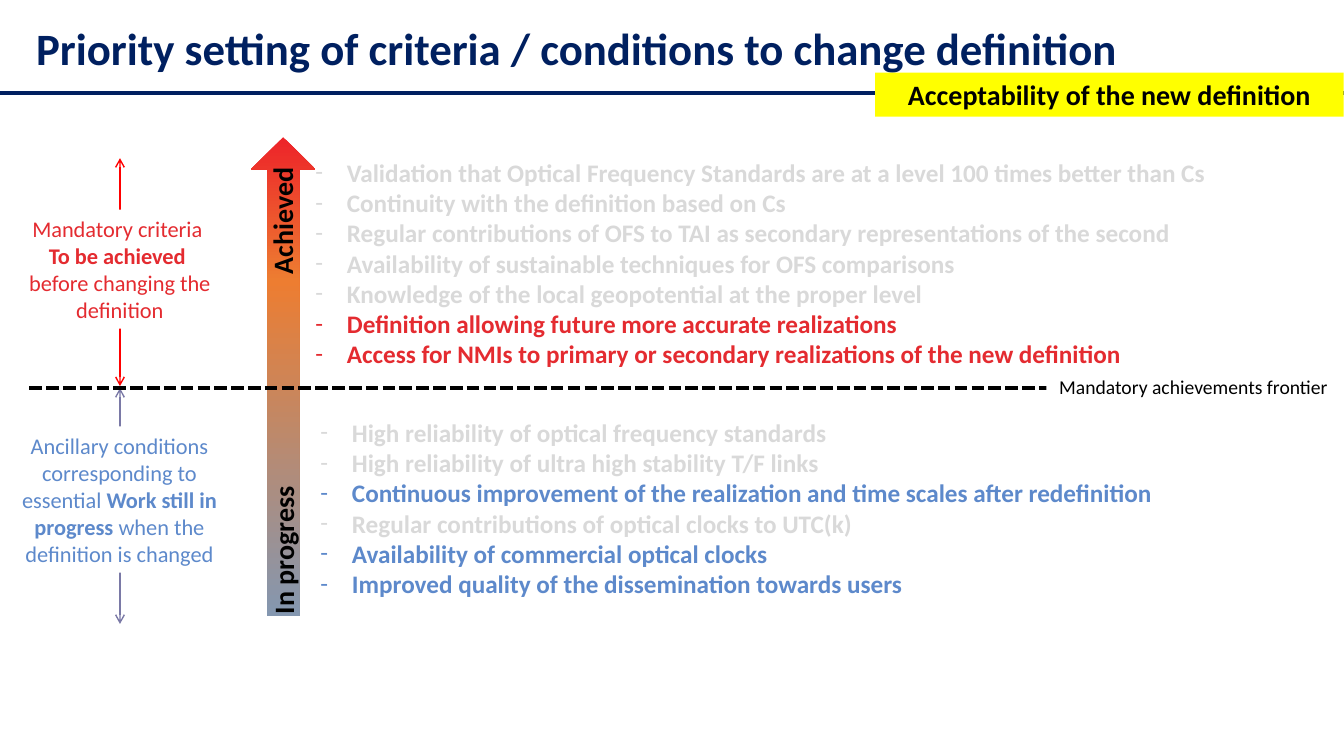
import copy
from dataclasses import dataclass

import lxml.etree
import pptx
import pptx.dml.color
import pptx.enum.dml
import pptx.enum.shapes
import pptx.enum.text
import pptx.oxml.ns
import pptx.shapes.base
import pptx.slide
import pptx.text.text
import pptx.util

Pt = pptx.util.Pt
qn = pptx.oxml.ns.qn
ALIGN = pptx.enum.text.PP_ALIGN

FONT = "Calibri"
BULLET_INDENT = 22.5
COLORS = {
    "navy": "002060", "black": "000000", "white": "FFFFFF", "yellow": "FFFF00",
    "grey": "D9D9D9", "red": "E42B30", "blue": "5D89CB",
    "red arrow": "FF0000", "violet arrow": "7A79A6",
    "top": "ED2329", "middle": "ED7D31", "bottom": "8497B0",
}


@dataclass(frozen=True)
class Span:
    text: str
    color: str
    bold: bool = False


@dataclass(frozen=True)
class Label:
    left: float
    top: float
    width: float
    height: float
    size: float
    paras: list[list[Span]]
    fill: str = ""
    centred: bool = True
    bulleted: bool = False
    rotation: float = 0


@dataclass(frozen=True)
class Rule:
    start: tuple[float, float]
    end: tuple[float, float]
    color: str
    weight: float
    dashed: bool = False
    arrows: bool = False


def rgb(name: str) -> pptx.dml.color.RGBColor:
    return pptx.dml.color.RGBColor.from_string(COLORS[name])


def bold_lines(*lines: tuple[str, str]) -> list[list[Span]]:
    """One bold paragraph for each (colour, text) pair."""
    return [[Span(text, color, True)] for color, text in lines]


def add_dash_bullet(para: pptx.text.text._Paragraph) -> None:
    props = para._p.get_or_add_pPr()
    props.set("marL", str(Pt(BULLET_INDENT)))
    props.set("indent", str(-Pt(BULLET_INDENT)))
    lxml.etree.SubElement(props, qn("a:buFont")).set("typeface", FONT)
    lxml.etree.SubElement(props, qn("a:buChar")).set("char", "-")


def add_label(page: pptx.slide.Slide, label: Label) -> None:
    place = [Pt(v) for v in (label.left, label.top, label.width, label.height)]
    if label.fill:
        box = page.shapes.add_shape(pptx.enum.shapes.MSO_SHAPE.RECTANGLE, *place)
        box.shadow.inherit = False
        box.fill.solid()
        box.fill.fore_color.rgb = rgb(label.fill)
        box.line.fill.background()
    else:
        box = page.shapes.add_textbox(*place)
    box.rotation = label.rotation
    frame = box.text_frame
    frame.word_wrap = True
    frame.auto_size = pptx.enum.text.MSO_AUTO_SIZE.SHAPE_TO_FIT_TEXT
    frame.text = "\n".join("" for _ in label.paras)
    for para, spans in zip(frame.paragraphs, label.paras):
        para.alignment = ALIGN.CENTER if label.centred else ALIGN.LEFT
        if label.bulleted:
            add_dash_bullet(para)
        for span in spans:
            run = para.add_run()
            run.text = span.text
            run.font.name = FONT
            run.font.size = Pt(label.size)
            run.font.bold = span.bold
            run.font.color.rgb = rgb(span.color)


def add_rule(page: pptx.slide.Slide, rule: Rule) -> None:
    connector = page.shapes.add_connector(
        pptx.enum.shapes.MSO_CONNECTOR.STRAIGHT,
        *(Pt(v) for v in rule.start + rule.end))
    connector.line.color.rgb = rgb(rule.color)
    connector.line.width = Pt(rule.weight)
    if rule.dashed:
        connector.line.dash_style = pptx.enum.dml.MSO_LINE.SQUARE_DOT
    if rule.arrows:
        outline = connector.line._get_or_add_ln()
        for tag in ("a:headEnd", "a:tailEnd"):
            lxml.etree.SubElement(outline, qn(tag)).set("type", "arrow")
    lxml.etree.SubElement(connector._element.spPr, qn("a:effectLst"))


def add_progress_arrow(page: pptx.slide.Slide) -> None:
    arrow = page.shapes.add_shape(
        pptx.enum.shapes.MSO_SHAPE.UP_ARROW, Pt(179.3), Pt(98), Pt(46), Pt(342))
    arrow.shadow.inherit = False
    arrow.line.fill.background()
    arrow.fill.gradient()
    arrow.fill.gradient_angle = 270
    stops = arrow._element.spPr.find(".//" + qn("a:gsLst"))
    stops.append(copy.deepcopy(stops[-1]))
    shades = (("top", 0), ("middle", 0.3), ("bottom", 1))
    for stop, (color, position) in zip(arrow.fill.gradient_stops, shades):
        stop.color.rgb = rgb(color)
        stop.position = position


MANDATORY = bold_lines(
    ("grey", "Validation that Optical Frequency Standards are at a level 100 times better than Cs"),
    ("grey", "Continuity with the definition based on Cs"),
    ("grey", "Regular contributions of OFS to TAI as secondary representations of the second"),
    ("grey", "Availability of sustainable techniques for OFS comparisons"),
    ("grey", "Knowledge of the local geopotential at the proper level"),
    ("red", "Definition allowing future more accurate realizations"),
    ("red", "Access for NMIs to primary or secondary realizations of the new definition"),
)
ANCILLARY = bold_lines(
    ("grey", "High reliability of optical frequency standards"),
    ("grey", "High reliability of ultra high stability T/F links"),
    ("blue", "Continuous improvement of the realization and time scales after redefinition"),
    ("grey", "Regular contributions of optical clocks to UTC(k)"),
    ("blue", "Availability of commercial optical clocks"),
    ("blue", "Improved quality of the dissemination towards users"),
)
MANDATORY_NOTE = [
    [Span("Mandatory criteria ", "red")],
    [Span("To be achieved ", "red", True)],
    [Span("before changing the definition", "red")],
]
ANCILLARY_NOTE = [[
    Span("Ancillary conditions corresponding to essential ", "blue"),
    Span("Work still in progress ", "blue", True),
    Span("when the definition is changed", "blue"),
]]
TITLE = bold_lines(("navy", "Priority setting of criteria / conditions to change definition"))
FRONTIER_Y = 277.2
SPAN_X = 85.7

# Back to front
ITEMS: list[Label | Rule] = [
    Label(145.4, 142, 112.3, 31.5, 20, bold_lines(("black", "Achieved")), rotation=270),
    Label(146.2, 377.3, 112.3, 31.5, 20, bold_lines(("black", "In progress")), rotation=270),
    Rule((SPAN_X, 113), (SPAN_X, 275.8), "red arrow", 1, arrows=True),
    Label(4.3, 149.8, 162.7, 85, 16, MANDATORY_NOTE, "white"),
    Rule((SPAN_X, FRONTIER_Y), (SPAN_X, 445.7), "violet arrow", 1, arrows=True),
    Label(2.9, 304.6, 164.9, 104.4, 16, ANCILLARY_NOTE, "white"),
    Rule((20.9, FRONTIER_Y), (941, FRONTIER_Y), "black", 3, dashed=True),
    Label(218.2, 108.7, 741.6, 203.8, 18, MANDATORY, centred=False, bulleted=True),
    Label(221.8, 294.5, 731.5, 181.4, 18, ANCILLARY, centred=False, bulleted=True),
    Label(747.4, 264.3, 210.2, 24.3, 14,
          [[Span("Mandatory achievements frontier", "black")]], "white"),
    Label(18.7, 11.5, 928, 46, 32, TITLE, centred=False),
    Rule((0, 66.5), (960, 66.5), "navy", 2.25),
    Label(625, 51.8, 334.8, 31.5, 20,
          bold_lines(("black", "Acceptability of the new definition")), "yellow"),
]


def main() -> None:
    deck = pptx.Presentation()
    deck.slide_width, deck.slide_height = Pt(960), Pt(540)
    page = deck.slides.add_slide(deck.slide_layouts[6])
    add_progress_arrow(page)
    for item in ITEMS:
        if isinstance(item, Label):
            add_label(page, item)
        else:
            add_rule(page, item)
    deck.save("out.pptx")


if __name__ == "__main__":
    main()
